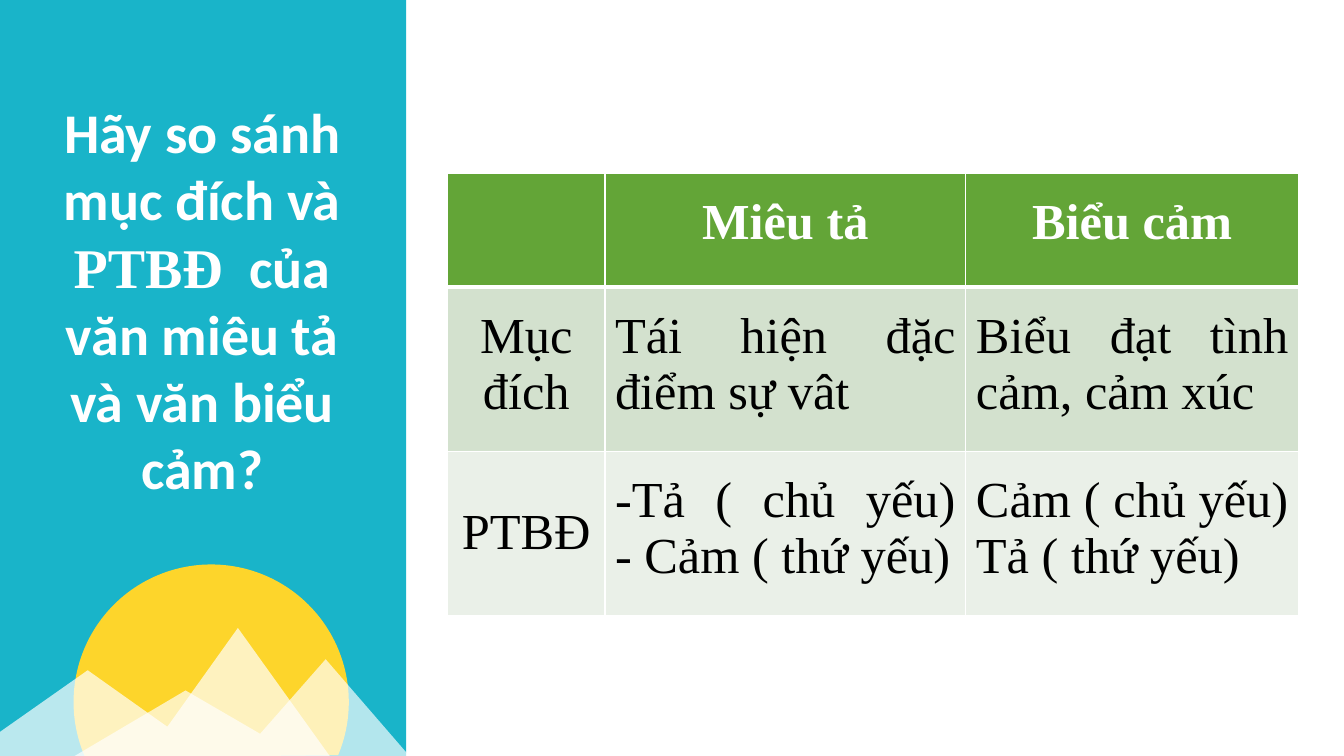
from lxml.etree import SubElement as Sub
from pptx import Presentation
from pptx.dml.color import RGBColor as RGB
from pptx.enum.shapes import MSO_SHAPE as Shape
from pptx.enum.text import MSO_ANCHOR as Anchor, MSO_AUTO_SIZE as Auto, PP_ALIGN as Align
from pptx.oxml.ns import qn
from pptx.util import Inches, Pt

WHITE = RGB(0xFF, 0xFF, 0xFF)
BLACK = RGB(0, 0, 0)
TEAL = RGB(0x19, 0xB4, 0xC9)
SUN = RGB(0xFD, 0xD5, 0x2B)
GREEN = RGB(0x63, 0xA5, 0x37)
BANDS = [RGB(0xD3, 0xE1, 0xCE), RGB(0xEA, 0xF0, 0xE8)]
SANS, SERIF = "Calibri", "Times New Roman"

# Ridge outlines, measured from the panel's bottom left corner
RIDGES = [
    (67, [(3.23, -0.96), (4.06, 0), (0.74, 0), (1.84, -0.65), (2.58, -0.22)]),
    (70, [(2.36, -1.27), (3.27, 0), (-0.34, 0), (0.87, -0.85), (1.66, -0.29)]),
]
ASK = [("Hãy so sánh mục đích và ", SANS), ("PTBĐ ", SERIF),
       (" của văn miêu tả và văn biểu cảm?", SANS)]
ROWS = [
    ["", "Miêu tả", "Biểu cảm"],
    ["Mục đích", "Tái hiện đặc điểm sự vât", "Biểu đạt tình cảm, cảm xúc"],
    ["PTBĐ", "-Tả ( chủ yếu)\n- Cảm ( thứ yếu)", "Cảm ( chủ yếu)\nTả ( thứ yếu)"],
]
COLS = [1.56, 3.58, 3.3]
HIGH = [1.13, 1.63, 1.63]


def paint(shape, color, alpha=None):
    shape.shadow.inherit = False
    shape.fill.solid()
    shape.fill.fore_color.rgb = color
    shape.line.fill.background()
    if alpha:
        tone = shape.fill._xPr.find(qn("a:solidFill"))[0]
        Sub(tone, qn("a:alpha"), val=str(alpha * 1000))


def write(para, text, font, size, color, bold):
    run = para.add_run()
    run.text = text
    run.font.name, run.font.size = font, Pt(size)
    run.font.color.rgb, run.font.bold = color, bold


def edge(cell, widths):
    """Draw white borders; widths in points for each side."""
    props = cell._tc.get_or_add_tcPr()
    for spot, (side, width) in enumerate(widths.items()):
        line = Sub(props, qn("a:ln" + side), w=str(Pt(width)))
        fill = Sub(line, qn("a:solidFill"))
        Sub(fill, qn("a:srgbClr"), val=str(WHITE))
        props.insert(spot, line)


def panel(slide, left, top, width, height):
    shapes = slide.shapes
    back = shapes.add_shape(Shape.RECTANGLE, Inches(left), Inches(top),
                            Inches(width), Inches(height))
    paint(back, TEAL)

    # Sun, cut off at the foot of the panel
    foot = top + height
    sun = shapes.add_shape(Shape.CHORD, Inches(left + 0.73), Inches(foot - 1.9),
                           Inches(2.73), Inches(2.73))
    sun.adjustments[0], sun.adjustments[1] = 93.663, 13.638
    paint(sun, SUN)

    # Mountains
    for alpha, ridge in RIDGES:
        dots = [(Inches(left + x), Inches(foot + y)) for x, y in ridge]
        form = shapes.build_freeform(*dots[0])
        form.add_line_segments(dots[1:], close=True)
        paint(form.convert_to_shape(), WHITE, alpha)

    # Question, raised above the panel
    title = shapes.title
    title._element.getparent().append(title._element)
    title.left, title.top = Inches(left + 0.45), Inches(top + 0.92)
    title.width, title.height = Inches(3.11), Inches(4.14)
    frame = title.text_frame
    frame.word_wrap, frame.auto_size = True, Auto.NONE
    frame.vertical_anchor = Anchor.TOP
    para = frame.paragraphs[0]
    para.alignment = Align.CENTER
    for text, font in ASK:
        write(para, text, font, 40, WHITE, True)


def chart(slide, left, top):
    """Comparison table."""
    table = slide.shapes.add_table(len(ROWS), len(COLS), Inches(left), Inches(top),
                                   Inches(sum(COLS)), Inches(sum(HIGH))).table
    for col, width in zip(table.columns, COLS):
        col.width = Inches(width)
    for r, texts in enumerate(ROWS):
        table.rows[r].height = Inches(HIGH[r])
        head = r == 0
        for c, text in enumerate(texts):
            cell = table.cell(r, c)
            cell.fill.solid()
            cell.fill.fore_color.rgb = GREEN if head else BANDS[r - 1]
            edge(cell, {"L": 1, "R": 1, "T": 3 if r == 1 else 1, "B": 3 if head else 1})
            cell.margin_top = Inches(0.53 if (r, c) == (2, 0) else 0.21)
            if not text:
                continue
            para = cell.text_frame.paragraphs[0]
            para.alignment = Align.CENTER if head or c == 0 else Align.JUSTIFY
            for n, line in enumerate(text.split("\n")):
                if n:
                    para.add_line_break()
                write(para, line, SERIF, 36, WHITE if head else BLACK, head)


def main():
    deck = Presentation()
    deck.slide_width, deck.slide_height = Inches(13.33), Inches(7.5)
    slide = deck.slides.add_slide(deck.slide_layouts[5])
    panel(slide, 0, 0, 4.03, 7.5)
    chart(slide, 4.44, 1.72)
    deck.save("out.pptx")


if __name__ == "__main__":
    main()
